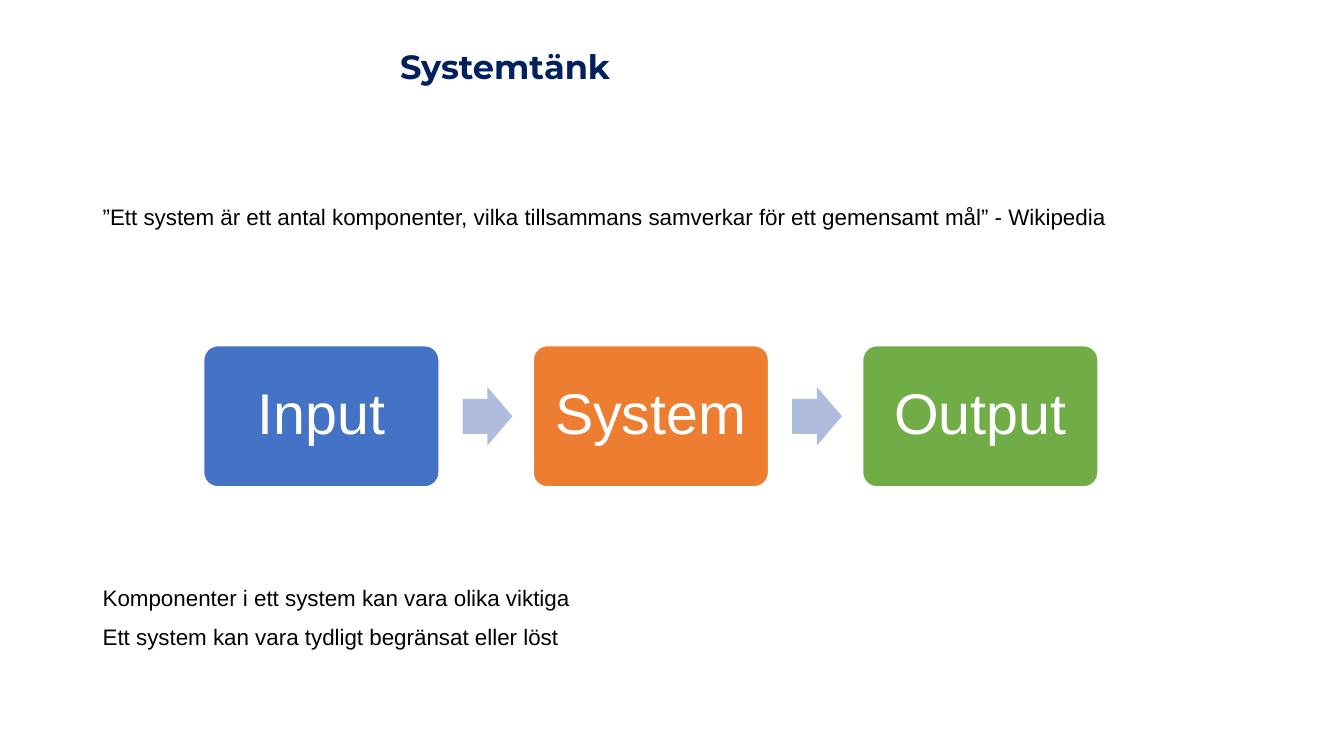
from pptx import Presentation
from pptx.dml.color import RGBColor
from pptx.enum.shapes import MSO_SHAPE
from pptx.enum.text import MSO_ANCHOR, PP_ALIGN
from pptx.util import Inches, Pt

ROUNDED = MSO_SHAPE.ROUNDED_RECTANGLE
ARROW = MSO_SHAPE.RIGHT_ARROW
MIDDLE, TOP = MSO_ANCHOR.MIDDLE, MSO_ANCHOR.TOP
CENTER = PP_ALIGN.CENTER

NAVY, BLACK, WHITE, ARROW_BLUE = "002060", "000000", "FFFFFF", "B0BCDE"
STEPS = [("Input", "4472C4"), ("System", "ED7D31"), ("Output", "70AD47")]
QUOTE = ("”Ett system är ett antal komponenter, vilka tillsammans samverkar "
         "för ett gemensamt mål” - Wikipedia")
REMARKS = ["Komponenter i ett system kan vara olika viktiga",
           "Ett system kan vara tydligt begränsat eller löst"]


def color(code):
    return RGBColor.from_string(code)


def write(frame, lines, size, code, font="Arial", bold=False, align=None):
    for index, line in enumerate(lines):
        para = frame.paragraphs[0] if index == 0 else frame.add_paragraph()
        para.line_spacing = 0.9
        para.alignment = align
        if index:
            para.space_before = Pt(10)
        span = para.add_run()
        span.text = line
        span.font.name = font
        span.font.size = Pt(size)
        span.font.bold = bold
        span.font.color.rgb = color(code)


def add_text(page, box, lines, size, code, anchor=TOP, **style):
    frame = page.shapes.add_textbox(*map(Inches, box)).text_frame
    frame.word_wrap = True
    frame.vertical_anchor = anchor
    write(frame, lines, size, code, **style)


def add_block(page, kind, box, fill, adjustments):
    block = page.shapes.add_shape(kind, *map(Inches, box))
    block.shadow.inherit = False
    block.fill.solid()
    block.fill.fore_color.rgb = color(fill)
    block.line.fill.background()
    for index, value in enumerate(adjustments):
        block.adjustments[index] = value
    return block


def add_process(page, box):
    """Equal steps across the box, with an arrow in each gap of 0.4 step."""
    left, top, width, height = box
    gap_share = 0.4
    step = width / (len(STEPS) + gap_share * (len(STEPS) - 1))
    arrow_width, arrow_height = 0.212 * step, 0.248 * step
    for index, (label, fill) in enumerate(STEPS):
        x = left + index * step * (1 + gap_share)
        if index:
            arrow_box = (x - 0.3 * step, top + (height - arrow_height) / 2,
                         arrow_width, arrow_height)
            add_block(page, ARROW, arrow_box, ARROW_BLUE, [0.6, 0.5])
        block = add_block(page, ROUNDED, (x, top, step, height), fill, [0.1])
        block.line.color.rgb = color(WHITE)
        block.line.width = Pt(1)
        block.text_frame.vertical_anchor = MIDDLE
        write(block.text_frame, [label], 41, WHITE, align=CENTER)


def main():
    deck = Presentation()
    deck.slide_width, deck.slide_height = Inches(13.33), Inches(7.5)
    page = deck.slides.add_slide(deck.slide_layouts[6])
    add_text(page, (3.87, 0.27, 6.36, 0.82), ["Systemtänk"], 24, NAVY,
             anchor=MIDDLE, font="Montserrat", bold=True)
    add_text(page, (0.92, 2, 11.5, 0.4), [QUOTE], 16, BLACK)
    add_process(page, (2.02, 3.43, 8.87, 1.4))
    add_text(page, (0.92, 5.78, 11.5, 0.8), REMARKS, 16, BLACK)
    deck.save("out.pptx")


if __name__ == "__main__":
    main()
